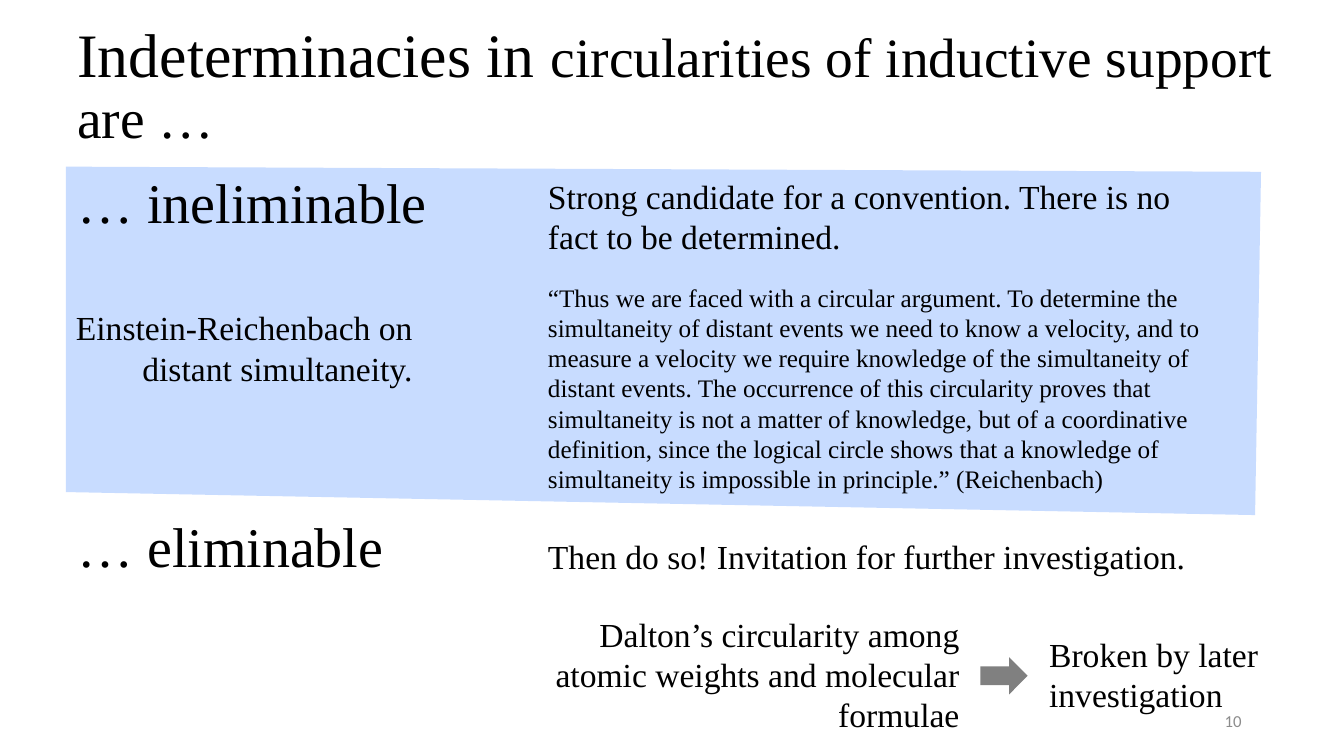
from pptx import Presentation
from pptx.dml.color import RGBColor
from pptx.enum.shapes import MSO_SHAPE as Shape
from pptx.enum.text import MSO_ANCHOR as Anchor, PP_ALIGN as Align
from pptx.util import Cm, Pt

COLORS = {"ink": "000000", "panel": "C8DCFF", "arrow": "808080", "number": "8C8C8C"}
LEFT, RIGHT = 1.7, 13.56


def write(frame, text, size=24, font="Times New Roman", color="ink",
          align=Align.LEFT, spacing=None):
    paragraph = frame.paragraphs[0]
    paragraph.alignment = align
    if spacing:
        paragraph.line_spacing = spacing
    pieces = [(text, size)] if isinstance(text, str) else text
    for words, points in pieces:
        run = paragraph.add_run()
        run.text = words
        run.font.size = Pt(points)
        run.font.name = font
        run.font.color.rgb = RGBColor.from_string(COLORS[color])


class Board:
    def __init__(self, slide):
        self.shapes = slide.shapes

    def text(self, box, text, wrap=True, anchor=Anchor.TOP, **style):
        frame = self.shapes.add_textbox(*map(Cm, box)).text_frame
        frame.word_wrap = wrap
        frame.vertical_anchor = anchor
        write(frame, text, **style)

    def paint(self, shape, color):
        shape.shadow.inherit = False
        shape.fill.solid()
        shape.fill.fore_color.rgb = RGBColor.from_string(COLORS[color])
        shape.line.fill.background()

    def panel(self, corners, color):
        start, *others = [(Cm(x), Cm(y)) for x, y in corners]
        outline = self.shapes.build_freeform(*start, scale=1.0)
        outline.add_line_segments(others, close=True)
        self.paint(outline.convert_to_shape(), color)

    def arrow(self, box, color):
        self.paint(self.shapes.add_shape(Shape.RIGHT_ARROW, *map(Cm, box)), color)


def main():
    deck = Presentation()
    deck.slide_width, deck.slide_height = Cm(33.87), Cm(19.05)
    board = Board(deck.slides.add_slide(deck.slide_layouts[6]))

    board.text((LEFT, 0.86, 30.78, 2.69),
               [("Indeterminacies in", 44.1), (" ", 43.2),
                ("circularities of inductive support are …", 39.6)],
               anchor=Anchor.MIDDLE, spacing=0.9)
    board.text((29.74, 17.65, 1.8, 1.02), "10", size=12, font="Calibri",
               color="number", align=Align.RIGHT, anchor=Anchor.MIDDLE)

    board.panel([(1.66, 4.2), (31.78, 4.33), (31.63, 12.98), (1.66, 12.4)], "panel")
    board.text((LEFT, 4.09, 9.42, 1.96), "… ineliminable", size=40, wrap=False)
    board.text((RIGHT, 4.3, 17.55, 2.31),
               "Strong candidate for a convention. There is no fact to be determined.")
    board.text((-0.25, 7.62, 10.9, 2.31),
               "Einstein-Reichenbach on distant simultaneity.", align=Align.RIGHT)
    board.text((RIGHT, 6.98, 16.97, 5.64),
               "“Thus we are faced with a circular argument. To determine the "
               "simultaneity of distant events we need to know a velocity, and to "
               "measure a velocity we require knowledge of the simultaneity of "
               "distant events. The occurrence of this circularity proves that "
               "simultaneity is not a matter of knowledge, but of a coordinative "
               "definition, since the logical circle shows that a knowledge of "
               "simultaneity is impossible in principle.” (Reichenbach)", size=18)

    board.text((LEFT, 12.76, 8.31, 1.96), "… eliminable", size=40, wrap=False)
    board.text((RIGHT, 13.39, 16.71, 1.27),
               "Then do so! Invitation for further investigation.", wrap=False)
    board.text((RIGHT, 15.34, 10.87, 3.33),
               "Dalton’s circularity among atomic weights and molecular formulae",
               align=Align.RIGHT)
    board.text((26.19, 15.85, 5.94, 2.31), "Broken by later investigation")
    board.arrow((24.71, 16.56, 1.19, 0.94), "arrow")

    deck.save("out.pptx")


if __name__ == "__main__":
    main()
